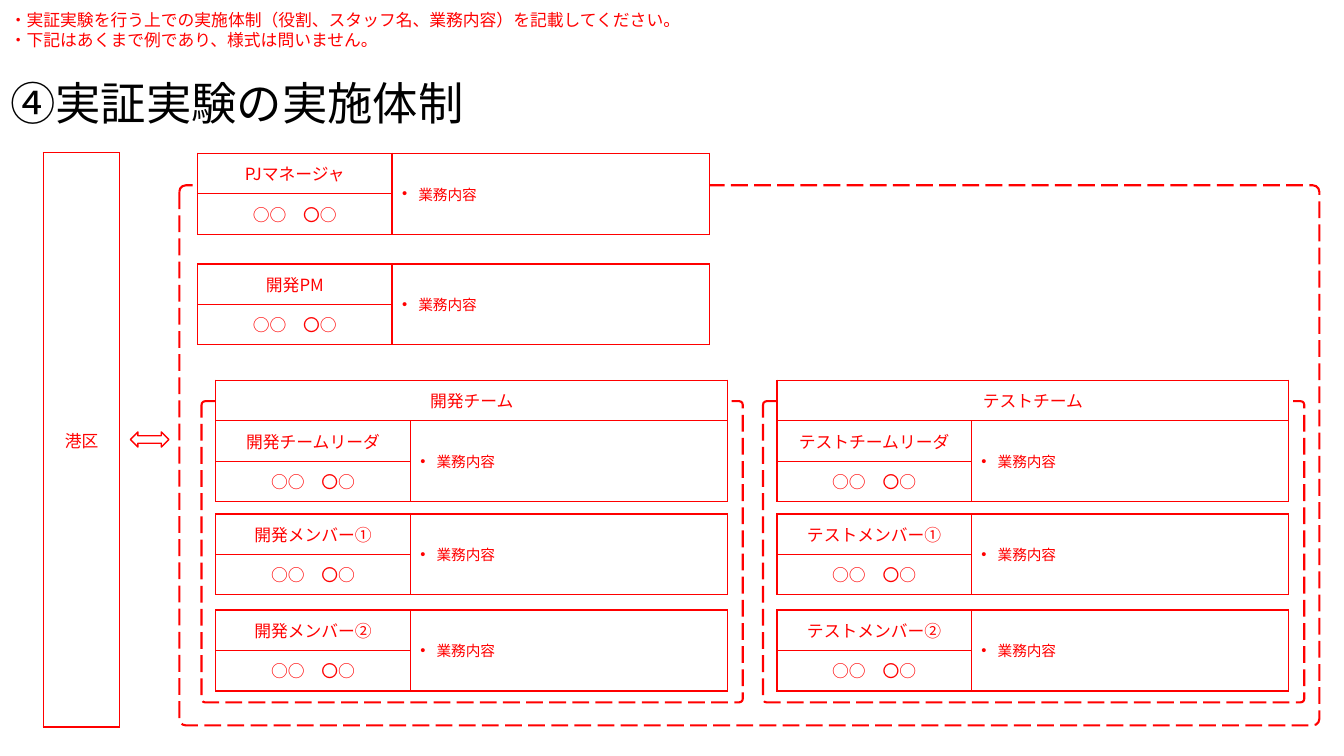
"""Build the slide showing the organisation for a demonstration experiment."""
import pptx
import pptx.dml.color
import pptx.enum.dml
import pptx.enum.shapes
import pptx.enum.text
import pptx.oxml
import pptx.oxml.ns
import pptx.util
from pptx.util import Cm

COLORS = {"red": "FF0000", "black": "000000", "white": "FFFFFF"}
RGB = {name: pptx.dml.color.RGBColor.from_string(value) for name, value in COLORS.items()}
FONT = "Noto Sans CJK JP"
NAMESPACE = pptx.oxml.ns.nsdecls("a")
MIDDLE = pptx.enum.text.MSO_ANCHOR.MIDDLE
PRESETS = pptx.enum.shapes.MSO_SHAPE


def style_text(frame, size, color="red", align=pptx.enum.text.PP_ALIGN.LEFT):
    for para in frame.paragraphs:
        para.alignment = align
        for span in para.runs:
            span.font.size = pptx.util.Pt(size)
            span.font.color.rgb = RGB[color]
            span.font.name = FONT
            properties = span.font._element
            properties.set("lang", "ja-JP")
            properties.append(pptx.oxml.parse_xml(f'<a:ea {NAMESPACE} typeface="{FONT}"/>'))


def add_red_table(left, top, widths, heights):
    table = page.shapes.add_table(len(heights), len(widths), Cm(left), Cm(top),
                                  Cm(sum(widths)), Cm(sum(heights))).table
    table.first_row = table.horz_banding = False
    for column, width in zip(table.columns, widths):
        column.width = Cm(width)
    for row, height in zip(table.rows, heights):
        row.height = Cm(height)
    for cell in table.iter_cells():
        cell.fill.solid()
        cell.fill.fore_color.rgb = RGB["white"]
        cell.vertical_anchor = MIDDLE
        for index, side in enumerate("LRTB"):
            cell._tc.tcPr.insert(index, pptx.oxml.parse_xml(
                f'<a:ln{side} {NAMESPACE} w="12700"><a:solidFill>'
                f'<a:srgbClr val="{COLORS["red"]}"/></a:solidFill></a:ln{side}>'))
    return table


deck = pptx.Presentation()
deck.slide_width, deck.slide_height = Cm(33.87), Cm(19.05)
page = deck.slides.add_slide(deck.slide_layouts[5])

for left, top, width, height in [(19.23, 10.11, 13.64, 7.59), (5.08, 10.11, 13.64, 7.59),
                                 (4.52, 4.67, 28.73, 13.61)]:
    frame = page.shapes.add_shape(PRESETS.ROUNDED_RECTANGLE, Cm(left), Cm(top), Cm(width), Cm(height))
    frame.adjustments[0] = 0.012
    frame.shadow.inherit = False
    frame.fill.background()
    frame.line.color.rgb = RGB["red"]
    frame.line.width = pptx.util.Pt(1.5)
    frame.line.dash_style = pptx.enum.dml.MSO_LINE.LONG_DASH

title = page.shapes.title
title.left, title.top, title.width, title.height = Cm(0), Cm(1.35), Cm(29.21), Cm(1.75)
title.text_frame.text = "④実証実験の実施体制"
title.text_frame.auto_size = pptx.enum.text.MSO_AUTO_SIZE.NONE
title.text_frame.vertical_anchor = MIDDLE
title.text_frame.paragraphs[0].line_spacing = 1.5
style_text(title.text_frame, 32.4, "black")

notice = page.shapes.add_textbox(Cm(0), Cm(-0.23), Cm(33.58), Cm(1.98)).text_frame
notice.word_wrap = True
notice.vertical_anchor = MIDDLE
notice.text = ("・実証実験を行う上での実施体制（役割、スタッフ名、業務内容）を記載してください。\n"
               "・下記はあくまで例であり、様式は問いません。")
style_text(notice, 12)

CENTER = pptx.enum.text.PP_ALIGN.CENTER
ward = add_red_table(1.09, 3.84, [1.93], [14.48]).cell(0, 0)
ward.text = "港区"
style_text(ward.text_frame, 12, align=CENTER)

role_tables = [(4.98, 3.86, None, "PJマネージャ"), (4.98, 6.65, None, "開発PM")]
for left, team in [(5.44, "開発"), (19.58, "テスト")]:
    role_tables += [(left, 9.58, f"{team}チーム", f"{team}チームリーダ"),
                    (left, 12.95, None, f"{team}メンバー①"),
                    (left, 15.37, None, f"{team}メンバー②")]

for left, top, heading, role in role_tables:
    first = 1 if heading else 0
    table = add_red_table(left, top, [4.9, 8], [1.02] * (first + 2))
    labels = [heading, role, "○○　〇○"] if heading else [role, "○○　〇○"]
    if heading:
        table.cell(0, 0).merge(table.cell(0, 1))
    for row, label in enumerate(labels):
        table.cell(row, 0).text = label
        style_text(table.cell(row, 0).text_frame, 12, align=CENTER)
    duties = table.cell(first, 1)
    duties.merge(table.cell(first + 1, 1))
    duties.text = "業務内容"
    style_text(duties.text_frame, 10.5)
    bullet = duties.text_frame.paragraphs[0]._p.get_or_add_pPr()
    bullet.set("marL", str(Cm(0.41)))
    bullet.set("indent", str(-Cm(0.41)))
    bullet.append(pptx.oxml.parse_xml(f'<a:buFont {NAMESPACE} typeface="Arial"/>'))
    bullet.append(pptx.oxml.parse_xml(f'<a:buChar {NAMESPACE} char="•"/>'))

arrow = page.shapes.add_shape(PRESETS.UP_DOWN_ARROW, Cm(3.58), Cm(10.59), Cm(0.38), Cm(0.97))
arrow.rotation = 90
arrow.shadow.inherit = False
arrow.fill.solid()
arrow.fill.fore_color.rgb = RGB["white"]
arrow.line.color.rgb = RGB["red"]
arrow.line.width = pptx.util.Pt(1)

deck.save("out.pptx")
